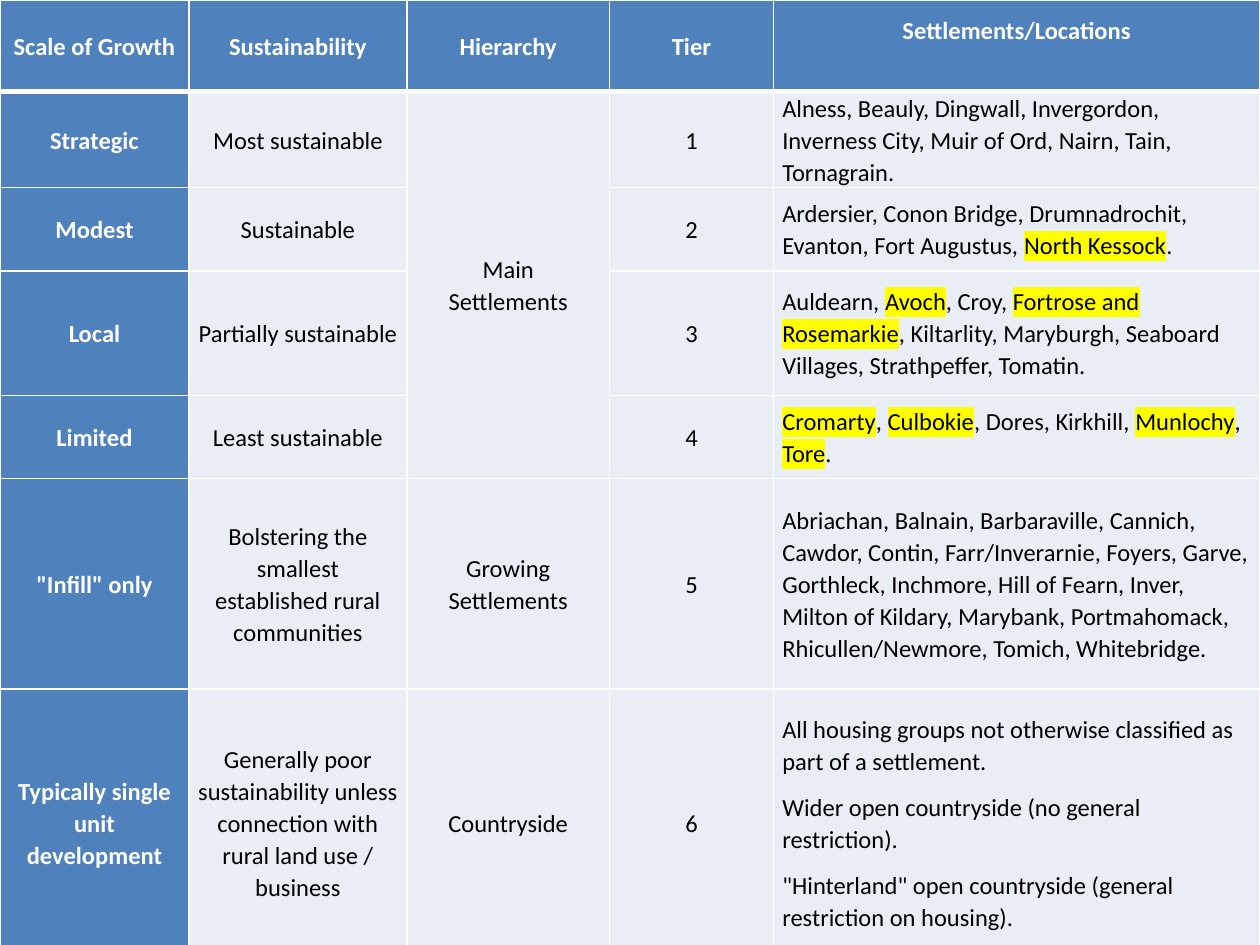
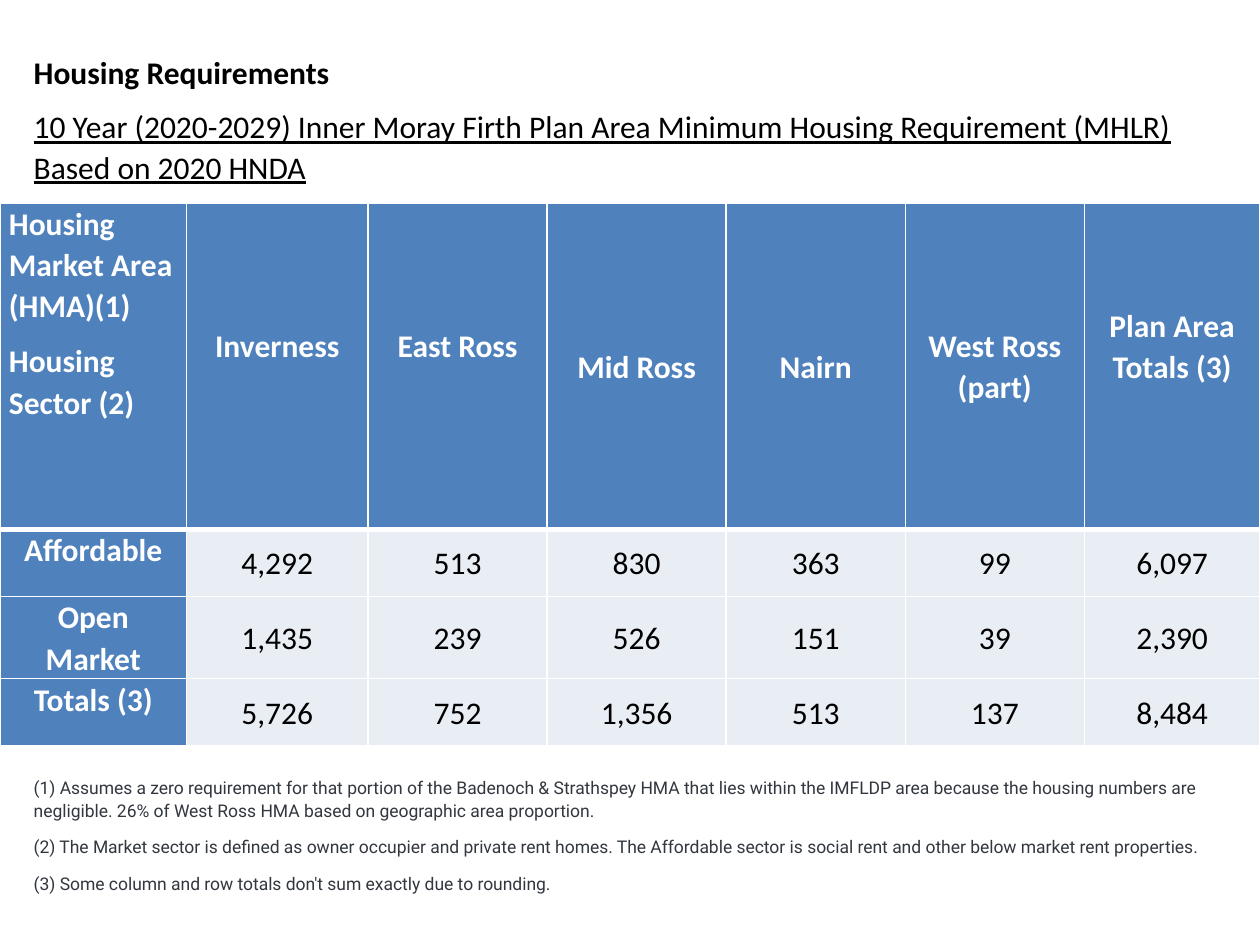
"""Build two slides on settlement hierarchy and housing requirements."""
from copy import deepcopy
from dataclasses import dataclass

from lxml.etree import SubElement
from pptx import Presentation
from pptx.dml.color import RGBColor
from pptx.enum.text import MSO_ANCHOR, PP_ALIGN
from pptx.oxml import parse_xml
from pptx.oxml.ns import nsdecls, qn
from pptx.util import Cm, Pt

HIERARCHY_HEADS = ["Scale of Growth", "Sustainability", "Hierarchy", "Tier", "Settlements/Locations"]
HIERARCHY_ROWS = [
    ["Strategic", "Most sustainable", "Main\nSettlements", "1",
     ["Alness, Beauly, Dingwall, Invergordon, Inverness City, Muir of Ord, Nairn, Tain, Tornagrain."]],
    ["Modest", "Sustainable", "", "2",
     ["Ardersier, Conon Bridge, Drumnadrochit, Evanton, Fort Augustus, |North Kessock|."]],
    ["Local", "Partially sustainable", "", "3",
     ["Auldearn, |Avoch|, Croy, |Fortrose and Rosemarkie|, Kiltarlity, Maryburgh, "
      "Seaboard Villages, Strathpeffer, Tomatin."]],
    ["Limited", "Least sustainable", "", "4",
     ["|Cromarty|, |Culbokie|, Dores, Kirkhill, |Munlochy|, |Tore|."]],
    ["\"Infill\" only", "Bolstering the smallest established rural communities", "Growing\nSettlements", "5",
     ["Abriachan, Balnain, Barbaraville, Cannich, Cawdor, Contin, Farr/Inverarnie, Foyers, Garve, "
      "Gorthleck, Inchmore, Hill of Fearn, Inver, Milton of Kildary, Marybank, Portmahomack, "
      "Rhicullen/Newmore, Tomich, Whitebridge."]],
    ["Typically single unit development",
     "Generally poor sustainability unless connection with rural land use / business", "Countryside", "6",
     ["All housing groups not otherwise classified as part of a settlement.",
      "Wider open countryside (no general restriction).",
      "\"Hinterland\" open countryside (general restriction on housing)."]],
]
HIERARCHY_WIDTHS = [3.81, 4.39, 4.09, 3.3, 9.81]
HIERARCHY_HEIGHTS = [1.85, 1.68, 1.68, 2.51, 1.68, 4.24, 5.41]

HOUSING_INTRO = "Housing Requirements"
HOUSING_SUBTITLE = ("10 Year (2020-2029) Inner Moray Firth Plan Area Minimum Housing Requirement (MHLR) "
                    "Based on 2020 HNDA")
HOUSING_HEADS = [["Housing Market Area (HMA)(1)", "Housing Sector (2)"], "Inverness", "East Ross",
                 "Mid Ross", "Nairn", "West Ross (part)", "Plan Area\nTotals (3)"]
HOUSING_ROWS = [
    ["Affordable", "4,292", "513", "830", "363", "99", "6,097"],
    ["Open Market", "1,435", "239", "526", "151", "39", "2,390"],
    ["Totals (3)", "5,726", "752", "1,356", "513", "137", "8,484"],
]
HOUSING_WIDTHS = [3.76, 3.66] + [3.61] * 4 + [3.54]
HOUSING_HEIGHTS = [6.58] + [1.35] * 3
HOUSING_NOTES = [
    "(1) Assumes a zero requirement for that portion of the Badenoch & Strathspey HMA that lies within "
    "the IMFLDP area because the housing numbers are negligible. 26% of West Ross HMA based on "
    "geographic area proportion.",
    "(2) The Market sector is defined as owner occupier and private rent homes. The Affordable sector "
    "is social rent and other below market rent properties.",
    "(3) Some column and row totals don't sum exactly due to rounding.",
]


@dataclass(frozen=True)
class Theme:
    header: str = "4F81BD"
    body: str = "E9EDF4"
    white: str = "FFFFFF"
    black: str = "000000"
    note: str = "32373F"
    highlight: str = "FFFF00"
    font: str = "Calibri"
    note_font: str = "Roboto"
    small: int = 10
    medium: int = 14
    large: int = 18


THEME = Theme()


def add_run(paragraph, text, size, color, font=THEME.font, bold=False, underline=False, marked=False):
    run = paragraph.add_run()
    run.text = text
    run.font.size = Pt(size)
    run.font.bold = bold
    if underline:
        run.font.underline = True
    run.font.name = font
    run.font.color.rgb = RGBColor.from_string(color)
    if marked:
        highlight = parse_xml(f'<a:highlight {nsdecls("a")}><a:srgbClr val="{THEME.highlight}"/></a:highlight>')
        run.font._element.find(qn("a:latin")).addprevious(highlight)
    return run


def add_paragraph(frame, text, align=PP_ALIGN.LEFT, **style):
    first = frame.paragraphs[0]
    paragraph = frame.add_paragraph() if first.runs else first
    paragraph.alignment = align
    paragraph.line_spacing = 1.07
    paragraph.space_after = Pt(8)
    for part, piece in enumerate(text.split("|")):
        for row, line in enumerate(piece.split("\n")):
            if row:
                paragraph.add_line_break()
                paragraph._p[-1].append(deepcopy(run.font._element))
            if line:
                run = add_run(paragraph, line, marked=part % 2 == 1, **style)


def set_borders(cell, top, bottom):
    properties = cell._tc.get_or_add_tcPr()
    for place, (side, width) in enumerate(zip("LRTB", (1, 1, top, bottom))):
        line = parse_xml(f'<a:ln{side} {nsdecls("a")} w="{Pt(width)}"/>')
        SubElement(SubElement(line, qn("a:solidFill")), qn("a:srgbClr")).set("val", THEME.white)
        properties.insert(place, line)


def add_grid(slide, top, heads, rows, widths, heights, size, lifted, lift):
    table = slide.shapes.add_table(len(heights), len(widths), Cm(0), Cm(top),
                                   Cm(sum(widths)), Cm(sum(heights))).table
    table.horz_banding = False
    for column, width in zip(table.columns, widths):
        column.width = Cm(width)
    for band, height in zip(table.rows, heights):
        band.height = Cm(height)
    for r, entries in enumerate([heads] + rows):
        for c, entry in enumerate(entries):
            cell = table.cell(r, c)
            heading = r == 0 or c == 0
            cell.fill.solid()
            cell.fill.fore_color.rgb = RGBColor.from_string(THEME.header if heading else THEME.body)
            set_borders(cell, 3 if r == 1 else 1, 3 if r == 0 else 1)
            cell.vertical_anchor = MSO_ANCHOR.MIDDLE
            cell.margin_left = cell.margin_right = Cm(0.18)
            cell.margin_top = 0
            cell.margin_bottom = Cm(lift if r == 0 and c in lifted else 0)
            listed = isinstance(entry, list)
            for text in entry if listed else [entry]:
                add_paragraph(cell.text_frame, text, PP_ALIGN.LEFT if listed else PP_ALIGN.CENTER,
                              size=size, color=THEME.white if heading else THEME.black, bold=heading)
    return table


def add_text_frame(slide, left, top, width, height):
    frame = slide.shapes.add_textbox(Cm(left), Cm(top), Cm(width), Cm(height)).text_frame
    frame.word_wrap = True
    return frame


def build_hierarchy(slide):
    grid = add_grid(slide, 0, HIERARCHY_HEADS, HIERARCHY_ROWS, HIERARCHY_WIDTHS, HIERARCHY_HEIGHTS,
                    THEME.medium, lifted={4}, lift=0.65)
    grid.cell(1, 2).merge(grid.cell(4, 2))


def build_housing(slide):
    grid = add_grid(slide, 4.09, HOUSING_HEADS, HOUSING_ROWS, HOUSING_WIDTHS, HOUSING_HEIGHTS,
                    THEME.large, lifted={1, 2, 6}, lift=0.83)
    for r in range(len(HOUSING_HEIGHTS)):
        grid.cell(r, 0).vertical_anchor = MSO_ANCHOR.TOP
    intro = add_text_frame(slide, 0.43, 0.89, 24.31, 2.97)
    add_paragraph(intro, HOUSING_INTRO, size=THEME.large, color=THEME.black, bold=True)
    add_paragraph(intro, HOUSING_SUBTITLE, size=THEME.large, color=THEME.black, underline=True)
    notes = add_text_frame(slide, 0.43, 15.52, 24.97, 2.64)
    for note in HOUSING_NOTES:
        add_paragraph(notes, note, size=THEME.small, color=THEME.note, font=THEME.note_font)


def main():
    deck = Presentation()
    deck.slide_width, deck.slide_height = Cm(25.4), Cm(19.05)
    for build in (build_hierarchy, build_housing):
        build(deck.slides.add_slide(deck.slide_layouts[6]))
    deck.save("out.pptx")


if __name__ == "__main__":
    main()
